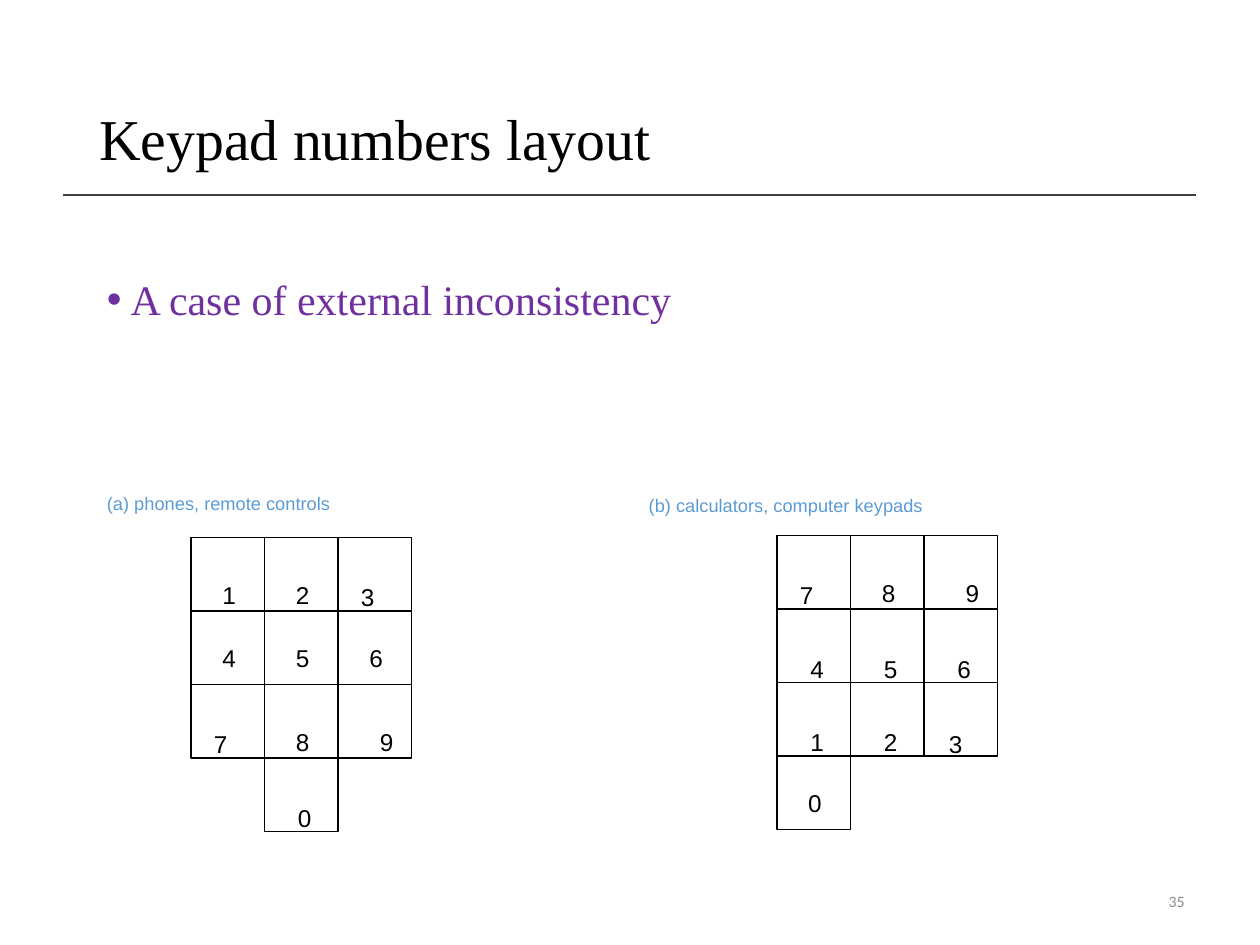
"""Build the slide that contrasts two keypad number layouts."""
from dataclasses import dataclass

from lxml.etree import SubElement
from pptx import Presentation
from pptx.dml.color import RGBColor
from pptx.enum.shapes import MSO_CONNECTOR as Connector, MSO_SHAPE as Shape
from pptx.enum.text import MSO_ANCHOR as Anchor, MSO_AUTO_SIZE as AutoSize, PP_ALIGN as Align
from pptx.oxml.ns import qn
from pptx.util import Pt

KEY_SIZE = 42
BLACK = "000000"
CAPTION_BLUE = "5B9BD5"


@dataclass(frozen=True)
class Key:
    digit: str
    column: int
    row: int
    inset_x: float
    inset_y: float


@dataclass(frozen=True)
class Keypad:
    caption: str
    caption_box: tuple[float, float, float, float]
    left: float
    top: float
    keys: tuple[Key, ...]


PHONE = Keypad(
    "(a) phones, remote controls", (54, 265.8, 237, 29), 109.2, 307.2,
    (
        Key("1", 0, 0, 10.8, 4.8), Key("2", 1, 0, 10.8, 4.8), Key("3", 2, 0, 6, 6),
        Key("4", 0, 1, 10.8, -1.2), Key("5", 1, 1, 10.8, -1.2), Key("6", 2, 1, 10.8, -1.2),
        Key("7", 0, 2, 6, 6), Key("8", 1, 2, 10.8, 4.8), Key("9", 2, 2, 16.8, 4.8),
        Key("0", 1, 3, 12, 6),
    ),
)
CALCULATOR = Keypad(
    "(b) calculators, computer keypads", (363.6, 267, 287, 29), 444, 306,
    (
        Key("7", 0, 0, 6, 6), Key("8", 1, 0, 10.8, 4.8), Key("9", 2, 0, 16.8, 4.8),
        Key("4", 0, 1, 12, 6), Key("5", 1, 1, 12, 6), Key("6", 2, 1, 12, 6),
        Key("1", 0, 2, 12, 6), Key("2", 1, 2, 12, 6), Key("3", 2, 2, 7.2, 7.2),
        Key("0", 0, 3, 10.8, -1.2),
    ),
)


def color(value: str) -> RGBColor:
    return RGBColor.from_string(value)


def write(frame, text: str, size: float, font_name: str, text_color: str):
    frame.text = text
    paragraph = frame.paragraphs[0]
    font = paragraph.runs[0].font
    font.size, font.name = Pt(size), font_name
    font.color.rgb = color(text_color)
    return paragraph


def add_text_frame(slide, box: tuple[float, float, float, float], wrap: bool = True):
    frame = slide.shapes.add_textbox(*map(Pt, box)).text_frame
    frame.word_wrap = wrap
    return frame


def add_subscript(slide, box: tuple[float, float, float, float], text: str,
                  size: float, text_color: str) -> None:
    frame = add_text_frame(slide, box, wrap=False)
    frame.auto_size = AutoSize.SHAPE_TO_FIT_TEXT
    paragraph = write(frame, text, size, "Arial", text_color)
    paragraph.runs[0].font._element.set("baseline", "-25000")


def add_key(slide, keypad: Keypad, key: Key) -> None:
    left = keypad.left + key.column * KEY_SIZE
    top = keypad.top + key.row * KEY_SIZE
    outline = slide.shapes.add_shape(Shape.RECTANGLE, *map(Pt, (left, top, KEY_SIZE, KEY_SIZE)))
    outline.shadow.inherit = False
    outline.fill.background()
    outline.line.color.rgb = color(BLACK)
    outline.line.width = Pt(0.75)
    digit_box = (left + key.inset_x, top + key.inset_y, 28, 36)
    add_subscript(slide, digit_box, key.digit, 24, BLACK)


def add_keypad(slide, keypad: Keypad) -> None:
    for key in keypad.keys:
        add_key(slide, keypad, key)
    add_subscript(slide, keypad.caption_box, keypad.caption, 18, CAPTION_BLUE)


def add_heading(slide) -> None:
    rule = slide.shapes.add_connector(Connector.STRAIGHT, Pt(36), Pt(111.6), Pt(683.3), Pt(111.6))
    rule.line.color.rgb = color("404040")
    rule.line.width = Pt(1)
    SubElement(rule._element.spPr, qn("a:effectLst"))

    title = slide.shapes.title
    title.left, title.top, title.width, title.height = map(Pt, (49.5, 28.8, 621, 104.4))
    title.text_frame.vertical_anchor = Anchor.MIDDLE
    heading = write(title.text_frame, "Keypad numbers layout", 33, "Times New Roman", BLACK)
    heading.alignment = Align.LEFT
    heading.line_spacing = 0.9


def add_statement(slide) -> None:
    frame = add_text_frame(slide, (54, 156, 630, 324))
    statement = write(frame, "A case of external inconsistency", 24, "Times New Roman", "7030A0")
    statement.line_spacing = 0.9
    statement.space_before = Pt(7.5)
    properties = statement._element.get_or_add_pPr()
    properties.set("marL", str(Pt(13.5)))
    properties.set("indent", str(Pt(-13.5)))
    SubElement(properties, qn("a:buFont"), typeface="Arial")
    SubElement(properties, qn("a:buChar"), char="•")


def add_page_number(slide) -> None:
    frame = add_text_frame(slide, (516, 500.5, 168, 28.8))
    frame.vertical_anchor = Anchor.MIDDLE
    write(frame, "35", 9, "Calibri", "8C8C8C").alignment = Align.RIGHT


def main() -> None:
    deck = Presentation()
    deck.slide_width, deck.slide_height = Pt(720), Pt(540)
    slide = deck.slides.add_slide(deck.slide_layouts.get_by_name("Title Only"))
    add_heading(slide)
    add_statement(slide)
    for keypad in (PHONE, CALCULATOR):
        add_keypad(slide, keypad)
    add_page_number(slide)
    deck.save("out.pptx")


if __name__ == "__main__":
    main()
